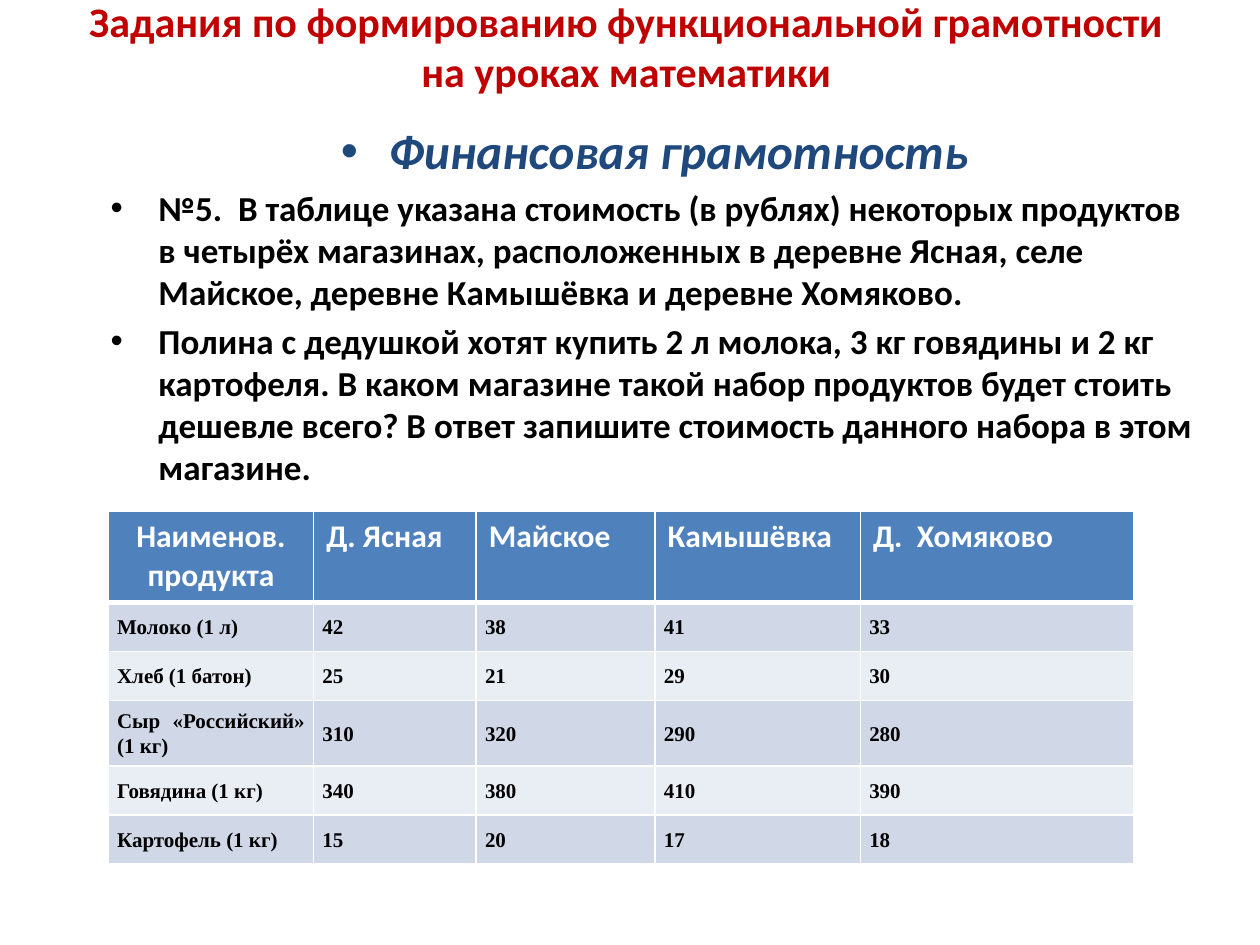
from pptx import Presentation
from pptx.dml.color import RGBColor
from pptx.enum.text import MSO_ANCHOR as Anchor, PP_ALIGN as Align
from pptx.oxml.ns import qn
from pptx.util import Inches, Pt
from lxml.etree import SubElement

COLORS = {
    "title": "C00000", "subtitle": "1F497D", "text": "000000",
    "white": "FFFFFF", "header": "4F81BD", "odd": "D0D8E8", "even": "E9EDF4",
}
TITLE = "Задания по формированию функциональной грамотности на уроках математики"
SUBTITLE = "Финансовая грамотность"
TASKS = [
    "№5.  В таблице указана стоимость (в рублях) некоторых продуктов в четырёх "
    "магазинах, расположенных в деревне Ясная, селе Майское, деревне Камышёвка "
    "и деревне Хомяково.",
    "Полина с дедушкой хотят купить 2 л молока, 3 кг говядины и 2 кг картофеля. "
    "В каком магазине такой набор продуктов будет стоить дешевле всего? "
    "В ответ запишите стоимость данного набора в этом магазине.",
]
PRICES = [
    ["Наименов. продукта", "Д. Ясная", "Майское", "Камышёвка", "Д.  Хомяково"],
    ["Молоко (1 л)", "42", "38", "41", "33"],
    ["Хлеб (1 батон)", "25", "21", "29", "30"],
    ["Сыр «Российский» (1 кг)", "310", "320", "290", "280"],
    ["Говядина (1 кг)", "340", "380", "410", "390"],
    ["Картофель (1 кг)", "15", "20", "17", "18"],
]
COL_WIDTHS = [1.63, 1.29, 1.42, 1.63, 2.17]
ROW_HEIGHTS = [0.72, 0.39, 0.39, 0.52, 0.39, 0.39]


def write(p, text, size, color, font="Calibri", italic=False, align=Align.LEFT,
          before=0, spacing=None, bullet=False):
    p.alignment = align
    p.space_before = Pt(before)
    if spacing:
        p.line_spacing = spacing
    if bullet:
        pPr = p._p.get_or_add_pPr()
        pPr.set("marL", str(Inches(0.38)))
        pPr.set("indent", str(Inches(-0.38)))
        SubElement(pPr, qn("a:buFont"), typeface="Arial")
        SubElement(pPr, qn("a:buChar"), char="•")
    r = p.add_run()
    r.text = text
    r.font.name, r.font.size = font, Pt(size)
    r.font.bold, r.font.italic = True, italic
    r.font.color.rgb = RGBColor.from_string(COLORS[color])


def add_box(s, left, top, width, height, anchor=Anchor.TOP):
    box = s.shapes.add_textbox(Inches(left), Inches(top), Inches(width), Inches(height))
    tf = box.text_frame
    tf.word_wrap = True
    tf.vertical_anchor = anchor
    return tf


def set_borders(cell, top, bottom):
    tcPr = cell._tc.get_or_add_tcPr()
    for side, width in (("L", 1), ("R", 1), ("T", top), ("B", bottom)):
        ln = SubElement(tcPr, qn(f"a:ln{side}"), w=str(Pt(width)))
        fill = SubElement(ln, qn("a:solidFill"))
        SubElement(fill, qn("a:srgbClr"), val=COLORS["white"])


def fill_cell(cell, text, row, col):
    set_borders(cell, 3 if row == 1 else 1, 3 if row == 0 else 1)
    cell.fill.solid()
    fill = "header" if row == 0 else "odd" if row % 2 else "even"
    cell.fill.fore_color.rgb = RGBColor.from_string(COLORS[fill])
    p = cell.text_frame.paragraphs[0]
    if row == 0:
        write(p, text, 18, "white", align=Align.LEFT if col else Align.CENTER)
    else:
        cell.vertical_anchor = Anchor.MIDDLE
        cell.margin_left = cell.margin_right = Inches(0.07)
        cell.margin_top = cell.margin_bottom = 0
        write(p, text, 12, "text", font="Times New Roman", align=Align.JUSTIFY, spacing=1.07)


def add_price_table(s):
    table = s.shapes.add_table(
        len(PRICES), len(COL_WIDTHS), Inches(0.86), Inches(4.06),
        Inches(sum(COL_WIDTHS)), Inches(sum(ROW_HEIGHTS))).table
    for column, width in zip(table.columns, COL_WIDTHS):
        column.width = Inches(width)
    for row, height in zip(table.rows, ROW_HEIGHTS):
        row.height = Inches(height)
    for i, values in enumerate(PRICES):
        for j, text in enumerate(values):
            fill_cell(table.cell(i, j), text, i, j)


def main():
    prs = Presentation()
    prs.slide_width, prs.slide_height = Inches(10), Inches(7.5)
    s = prs.slides.add_slide(prs.slide_layouts[6])
    title = add_box(s, 0.47, 0, 9, 0.72, Anchor.MIDDLE)
    write(title.paragraphs[0], TITLE, 24, "title", align=Align.CENTER)
    body = add_box(s, 0.78, 0.91, 8.83, 5.81)
    write(body.paragraphs[0], SUBTITLE, 28, "subtitle", italic=True,
          align=Align.CENTER, bullet=True)
    for task in TASKS:
        write(body.add_paragraph(), task, 20, "text", before=4, bullet=True)
    add_price_table(s)
    prs.save("out.pptx")


if __name__ == "__main__":
    main()
